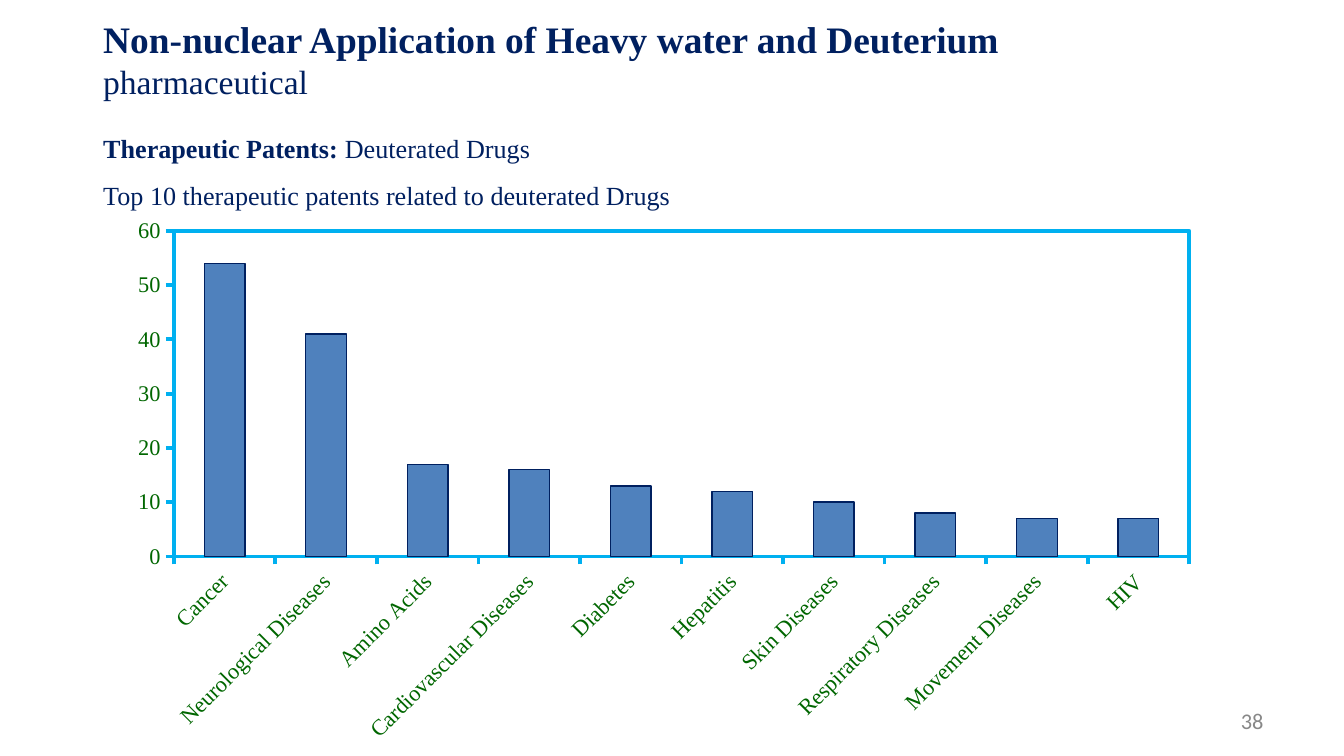
from pptx import Presentation
from pptx.chart.data import CategoryChartData
from pptx.dml.color import RGBColor
from pptx.enum.chart import XL_CHART_TYPE, XL_TICK_LABEL_POSITION, XL_TICK_MARK
from pptx.enum.text import MSO_ANCHOR, PP_ALIGN
from pptx.oxml import parse_xml
from pptx.oxml.ns import nsdecls
from pptx.util import Pt

NAVY = RGBColor(0x00, 0x20, 0x60)
BLUE = RGBColor(0x4F, 0x81, 0xBD)
CYAN = RGBColor(0x00, 0xB0, 0xF0)
GREEN = RGBColor(0x00, 0x66, 0x00)
GREY = RGBColor(0x88, 0x88, 0x88)
COLUMN = XL_CHART_TYPE.COLUMN_CLUSTERED
LOW = XL_TICK_LABEL_POSITION.LOW
OUTSIDE = XL_TICK_MARK.OUTSIDE
NO_TICK = XL_TICK_MARK.NONE
MIDDLE = MSO_ANCHOR.MIDDLE
RIGHT = PP_ALIGN.RIGHT
SERIF = "Times New Roman"
SANS = "Calibri"

PATENTS = {
    "Cancer": 54,
    "Neurological Diseases": 41,
    "Amino Acids": 17,
    "Cardiovascular Diseases": 16,
    "Diabetes": 13,
    "Hepatitis": 12,
    "Skin Diseases": 10,
    "Respiratory Diseases": 8,
    "Movement Diseases": 7,
    "HIV": 7,
}
PLOT = {"x": 0.047, "y": 0.06, "w": 0.926, "h": 0.584}


def style(font, size, color, name=SERIF, bold=False):
    """Set the size, colour, face and weight of a font."""
    font.size = Pt(size)
    font.color.rgb = color
    font.name = name
    font.bold = bold


def add_box(slide, box, inset=7.2):
    """Add a wrapping text box and return its frame."""
    frame = slide.shapes.add_textbox(*map(Pt, box)).text_frame
    frame.word_wrap = True
    frame.margin_left = frame.margin_right = Pt(7.2)
    frame.margin_top = frame.margin_bottom = Pt(inset)
    return frame


def add_title(slide, box):
    """Write the title with its subject below."""
    frame = add_box(slide, box)
    frame.text = "Non-nuclear Application of Heavy water and Deuterium\npharmaceutical"
    head, topic = frame.paragraphs
    style(head.runs[0].font, 20, NAVY, bold=True)
    style(topic.runs[0].font, 18, NAVY)


def add_intro(slide, box):
    """Write the two lines that lead to the chart."""
    frame = add_box(slide, box)
    frame.text = "Therapeutic Patents: \nTop 10 therapeutic patents related to deuterated Drugs"
    lead, note = frame.paragraphs
    lead.add_run().text = "Deuterated Drugs"
    for line in (lead, note):
        line.line_spacing = 1.5
        for run in line.runs:
            style(run.font, 14, NAVY)
    lead.runs[0].font.bold = True


def style_axis(axis):
    """Give an axis its line, ticks and labels."""
    axis.has_major_gridlines = False
    axis.major_tick_mark = OUTSIDE
    axis.minor_tick_mark = NO_TICK
    axis.format.line.color.rgb = CYAN
    axis.format.line.width = Pt(2)
    style(axis.tick_labels.font, 12, GREEN)


def frame_plot(chart):
    """Fix the inner plot area and draw its border."""
    area = chart._chartSpace.chart.plotArea
    for old in area.xpath("c:layout"):
        area.remove(old)
    modes = "".join(f'<c:{key}Mode val="edge"/>' for key in "xy")
    sizes = "".join(f'<c:{key} val="{val}"/>' for key, val in PLOT.items())
    area.insert(0, parse_xml(
        f'<c:layout {nsdecls("c")}><c:manualLayout><c:layoutTarget val="inner"/>'
        f"{modes}{sizes}</c:manualLayout></c:layout>"))
    area.append(parse_xml(
        f'<c:spPr {nsdecls("c", "a")}><a:noFill/><a:ln w="{Pt(2)}"><a:solidFill>'
        f'<a:srgbClr val="{CYAN}"/></a:solidFill></a:ln></c:spPr>'))


def add_patents(slide, box):
    """Chart the patents for each illness."""
    data = CategoryChartData()
    data.categories = list(PATENTS)
    data.add_series("Series 1", list(PATENTS.values()))
    chart = slide.shapes.add_chart(COLUMN, *map(Pt, box), data).chart
    chart.has_title = chart.has_legend = False
    style(chart.font, 12, GREEN)
    for axis in (chart.category_axis, chart.value_axis):
        style_axis(axis)
    chart.category_axis.tick_label_position = LOW
    chart.category_axis._element.xpath("c:txPr/a:bodyPr")[0].set("rot", "-2700000")
    scale = chart.value_axis
    scale.minimum_scale, scale.maximum_scale, scale.major_unit = 0, 60, 10
    plot = chart.plots[0]
    plot.gap_width = 150
    plot.vary_by_categories = False
    bars = plot.series[0].format
    bars.fill.solid()
    bars.fill.fore_color.rgb = BLUE
    bars.line.color.rgb = NAVY
    bars.line.width = Pt(0.75)
    frame_plot(chart)


def add_number(slide, box):
    """Write the page number at the right."""
    frame = add_box(slide, box, 3.6)
    frame.vertical_anchor = MIDDLE
    frame.text = "38"
    line = frame.paragraphs[0]
    line.alignment = RIGHT
    style(line.runs[0].font, 12, GREY, SANS)


def main():
    """Build the slide and save it."""
    deck = Presentation()
    deck.slide_width, deck.slide_height = Pt(720), Pt(405)
    slide = deck.slides.add_slide(deck.slide_layouts[6])
    add_patents(slide, (65.5, 105.8, 587.5, 298.8))
    add_intro(slide, (48.2, 55.4, 550, 52.6))
    add_title(slide, (48.2, 1.4, 671.8, 82))
    add_number(slide, (516.2, 375.1, 167.8, 21.6))
    deck.save("out.pptx")


if __name__ == "__main__":
    main()
